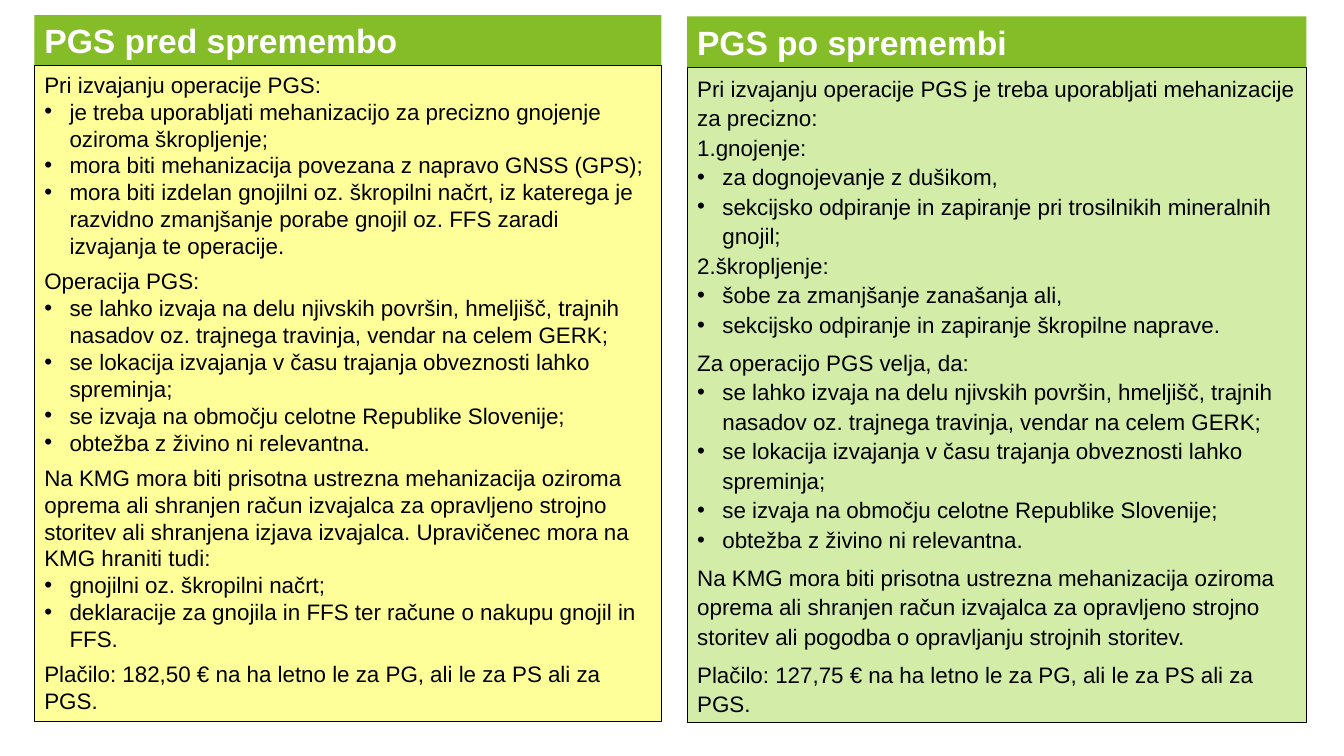
from lxml.etree import SubElement
from pptx import Presentation
from pptx.dml.color import RGBColor
from pptx.enum.text import MSO_ANCHOR, MSO_AUTO_SIZE, PP_ALIGN
from pptx.oxml.ns import qn
from pptx.util import Pt

SHARED_RULES = [
    ("bullet", "se lahko izvaja na delu njivskih površin, hmeljišč, trajnih nasadov oz. trajnega travinja, vendar na celem GERK;"),
    ("bullet", "se lokacija izvajanja v času trajanja obveznosti lahko spreminja;"),
    ("bullet", "se izvaja na območju celotne Republike Slovenije;"),
    ("bullet", "obtežba z živino ni relevantna."),
]
BEFORE = [
    ("plain", "Pri izvajanju operacije PGS:"),
    ("bullet", "je treba uporabljati mehanizacijo za precizno gnojenje oziroma škropljenje;"),
    ("bullet", "mora biti mehanizacija povezana z napravo GNSS (GPS);"),
    ("bullet", "mora biti izdelan gnojilni oz. škropilni načrt, iz katerega je razvidno zmanjšanje porabe gnojil oz. FFS zaradi izvajanja te operacije."),
    ("section", "Operacija PGS:"),
    *SHARED_RULES,
    ("section", "Na KMG mora biti prisotna ustrezna mehanizacija oziroma oprema ali shranjen račun izvajalca za opravljeno strojno storitev ali shranjena izjava izvajalca. Upravičenec mora na KMG hraniti tudi:"),
    ("bullet", "gnojilni oz. škropilni načrt;"),
    ("bullet", "deklaracije za gnojila in FFS ter račune o nakupu gnojil in FFS."),
    ("section", "Plačilo: 182,50 € na ha letno le za PG, ali le za PS ali za PGS."),
]
AFTER = [
    ("plain", "Pri izvajanju operacije PGS je treba uporabljati mehanizacije za precizno:"),
    ("number", "gnojenje:"),
    ("bullet", "za dognojevanje z dušikom,"),
    ("bullet", "sekcijsko odpiranje in zapiranje pri trosilnikih mineralnih gnojil;"),
    ("number", "škropljenje:"),
    ("bullet", "šobe za zmanjšanje zanašanja ali,"),
    ("bullet", "sekcijsko odpiranje in zapiranje škropilne naprave."),
    ("section", "Za operacijo PGS velja, da:"),
    *SHARED_RULES,
    ("section", "Na KMG mora biti prisotna ustrezna mehanizacija oziroma oprema ali shranjen račun izvajalca za opravljeno strojno storitev ali pogodba o opravljanju strojnih storitev."),
    ("section", "Plačilo: 127,75 € na ha letno le za PG, ali le za PS ali za PGS."),
]
BLACK, WHITE, GREEN = "000000", "FFFFFF", "84BD27"
HEADING_HEIGHT, RULES_HEIGHT, INDENT = 36.3, 468, 18


def color(value):
    return RGBColor.from_string(value)


def mark(paragraph, kind, number):
    props = paragraph._p.get_or_add_pPr()
    hanging = kind in ("bullet", "number")
    props.set("marL", str(Pt(INDENT) if kind == "bullet" else 0))
    props.set("indent", str(-Pt(INDENT) if hanging else 0))
    if kind == "bullet":
        SubElement(props, qn("a:buFont"), typeface="Arial")
        SubElement(props, qn("a:buChar"), char="•")
    elif kind == "number":
        SubElement(props, qn("a:buFont"), typeface="+mj-lt")
        SubElement(props, qn("a:buAutoNum"), type="arabicPeriod", startAt=str(number))
    else:
        SubElement(props, qn("a:buNone"))


def write(box, lines, size=16, ink=BLACK, bold=False, spacing=1.0,
          anchor=MSO_ANCHOR.TOP, fill=WHITE, outline=None):
    box.fill.solid()
    box.fill.fore_color.rgb = color(fill)
    if outline:
        box.line.color.rgb = color(outline)
        box.line.width = Pt(0.75)
    frame = box.text_frame
    frame.word_wrap = True
    frame.auto_size = MSO_AUTO_SIZE.NONE
    frame.vertical_anchor = anchor
    number = 0
    for position, (kind, text) in enumerate(lines):
        paragraph = frame.paragraphs[0] if position == 0 else frame.add_paragraph()
        number += kind == "number"
        paragraph.alignment = PP_ALIGN.LEFT
        paragraph.line_spacing = spacing
        paragraph.space_before = Pt(6 if kind == "section" else 0)
        mark(paragraph, kind, number)
        run = paragraph.add_run()
        run.text = text
        run.font.name = "Arial"
        run.font.size = Pt(size)
        run.font.bold = bold
        run.font.color.rgb = color(ink)


def place(box, left, top, width, height):
    box.left, box.top, box.width, box.height = map(Pt, (left, top, width, height))


deck = Presentation()
deck.slide_width, deck.slide_height = Pt(960), Pt(540)
slide = deck.slides.add_slide(deck.slide_layouts.get_by_name("Two Content"))
before_heading, before_rules, after_rules = slide.placeholders
after_heading = slide.shapes.add_textbox(0, 0, 0, 0)

columns = [
    (before_heading, "PGS pred spremembo", before_rules, BEFORE,
     24.5, 10.8, 448, "FFFF99", 1.0, MSO_ANCHOR.TOP),
    (after_heading, "PGS po spremembi", after_rules, AFTER,
     490.8, 11.7, 442.4, "D3EDA9", 1.1, MSO_ANCHOR.MIDDLE),
]
for heading, title, rules, lines, left, top, width, fill, spacing, anchor in columns:
    place(heading, left, top, width, HEADING_HEIGHT)
    write(heading, [("plain", title)], size=24, ink=WHITE, bold=True,
          anchor=MSO_ANCHOR.MIDDLE, fill=GREEN)
    place(rules, left, top + HEADING_HEIGHT, width, RULES_HEIGHT)
    write(rules, lines, spacing=spacing, anchor=anchor, fill=fill, outline=BLACK)

deck.save("out.pptx")
